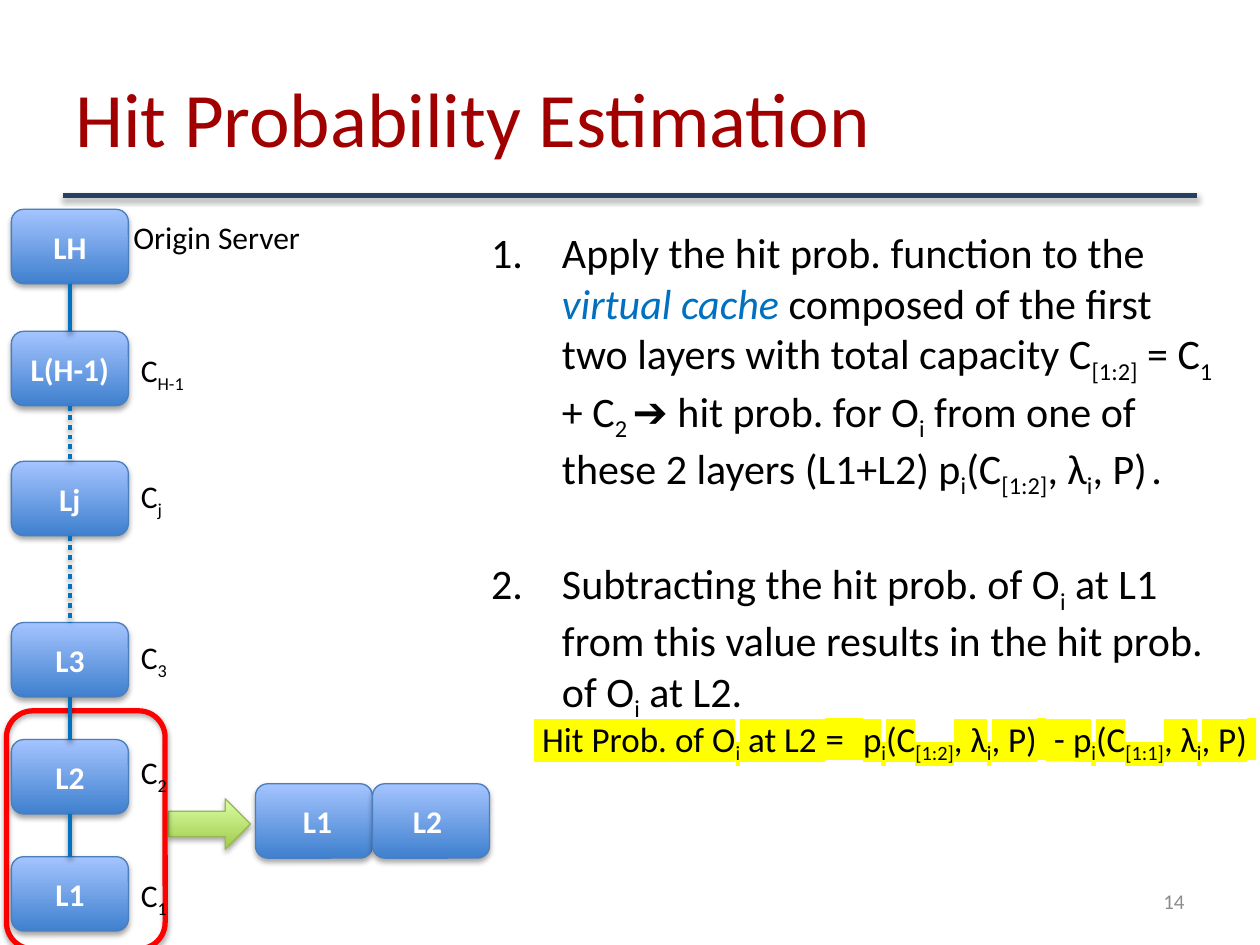
"""Build the hit probability slide: a stack of cache layers beside two numbered steps."""
from pptx import Presentation
from pptx.dml.color import RGBColor
from pptx.enum.dml import MSO_LINE
from pptx.enum.shapes import MSO_CONNECTOR, MSO_SHAPE
from pptx.enum.text import MSO_ANCHOR, PP_ALIGN
from pptx.oxml import parse_xml
from pptx.oxml.ns import nsdecls
from pptx.util import Cm, Pt

ROUND, ARROW = MSO_SHAPE.ROUNDED_RECTANGLE, MSO_SHAPE.RIGHT_ARROW
LINE, DOT = MSO_CONNECTOR.STRAIGHT, MSO_LINE.ROUND_DOT
TOP, MID = MSO_ANCHOR.TOP, MSO_ANCHOR.MIDDLE
LEFT, RIGHT, MIDST = PP_ALIGN.LEFT, PP_ALIGN.RIGHT, PP_ALIGN.CENTER

THEME = {
    "title": {"size": Pt(44), "name": "Calibri", "color": "A00000"},
    "body": {"size": Pt(24), "name": "Calibri", "color": "000000"},
    "term": {"color": "0070C0", "italic": True},
    "sum": {"size": Pt(20), "name": "Calibri", "color": "000000", "mark": "FFFF00"},
    "lato": {"name": "Lato"},
    "thin": {"name": "Lato", "size": Pt(10)},
    "robo": {"name": "Roboto"},
    "tag": {"size": Pt(18), "name": "Calibri", "color": "000000"},
    "node": {"size": Pt(18), "name": "Calibri", "color": "FFFFFF", "bold": True},
    "page": {"size": Pt(12), "name": "Calibri", "color": "8C8C8C"},
    "blue": {"fill": ("3F80CE", "A4C4FF"), "line": ("4B7EBC", 0.75)},
    "green": {"fill": ("A0CA4A", "DAFFA5"), "line": ("98B955", 0.75)},
    "red": {"fill": None, "line": ("FF0000", 3)},
    "rule": ("254061", 3),
    "link": ("0070C0", 2.75),
}

# Text between bars is subscript; a pair names its own style.
TITLE = ["Hit Probability Estimation"]
STEPS = [
    ["Apply the hit prob. function to the ", ("virtual cache ", "term"),
     "composed of the first two layers with total capacity C|[1:2]| = C|1 |+ C|2 |"
     "➔ hit prob. for O|i| from one of these 2 layers (L1+L2) p|i|(C|[1:2]|, λ|i|, P)",
     (" ", "thin"), "."],
    ["Subtracting the hit prob. of O|i| at L1 from this value results in "
     "the hit prob. of O|i| at L2."],
]
SUM = [" Hit Prob. of O|i| at L2 ", ("=  ", "lato"), "p|i|(C|[1:2]|, λ|i|, P)",
       (" ", "lato"), (" - ", "robo"), "p|i|(C|[1:1]|, λ|i|, P)", (" ", "lato"), (" ", "robo")]
# name, top, tag, tag left, tag drop, dotted link to the next layer
STACK = [
    ("LH", 4.22, "Origin Server", 2.44, 0.05, False),
    ("L(H-1)", 6.68, "C|H-1|", 2.59, 0.28, True),
    ("Lj", 9.3, "C|j|", 2.59, 0.2, True),
    ("L3", 12.55, "C|3|", 2.59, 0.18, False),
    ("L2", 14.91, "C|2|", 2.59, 0.15, False),
    ("L1", 17.27, "C|1|", 2.59, 0.26, False),
]
PAIR = [" L1", "L2 "]
WIDE, HIGH, EDGE = 2.36, 1.5, 0.23


def shade(item, alpha, dist):
    """Give a shape or line its soft shadow."""
    item._element.spPr.append(parse_xml(
        f'<a:effectLst {nsdecls("a")}><a:outerShdw blurRad="40000" dist="{dist}" dir="5400000" '
        f'rotWithShape="0"><a:srgbClr val="000000"><a:alpha val="{alpha}000"/></a:srgbClr>'
        '</a:outerShdw></a:effectLst>'))


def style(run, look, sub):
    """Format one run from a dict of values."""
    font, props = run.font, run._r.get_or_add_rPr()
    for key, val in look.items():
        if key == "color":
            font.color.rgb = RGBColor.from_string(val)
        elif key != "mark":
            setattr(font, key, val)
    if "mark" in look:
        font.fill._xPr.solidFill.addnext(parse_xml(
            f'<a:highlight {nsdecls("a")}><a:srgbClr val="{look["mark"]}"/></a:highlight>'
        )) if hasattr(font.fill._xPr, "solidFill") else props[0].addnext(parse_xml(
            f'<a:highlight {nsdecls("a")}><a:srgbClr val="{look["mark"]}"/></a:highlight>'))
    if sub:
        props.set("baseline", "-25000")


def write(para, parts, base):
    """Fill a paragraph with plain, styled and subscript runs."""
    for part in parts:
        text, extra = part if isinstance(part, tuple) else (part, None)
        look = {**THEME[base], **THEME.get(extra, {})}
        for num, bit in enumerate(text.split("|")):
            if bit:
                run = para.add_run()
                run.text = bit
                style(run, look, num % 2)


def put(item, paras, base, anchor=TOP, align=LEFT, wrap=True):
    """Set the text of a shape or box."""
    frame = item.text_frame
    frame.word_wrap, frame.vertical_anchor = wrap, anchor
    for num, parts in enumerate(paras):
        para = frame.add_paragraph() if num else frame.paragraphs[0]
        para.alignment = align
        write(para, parts, base)
    return frame


def box(slide, area, *args, **opts):
    """Add a text box."""
    return put(slide.shapes.add_textbox(*map(Cm, area)), *args, **opts)


def block(slide, kind, area, look):
    """Add a preset shape with its fill, line and shadow."""
    item = slide.shapes.add_shape(kind, *map(Cm, area))
    fill, (hue, width) = THEME[look]["fill"], THEME[look]["line"]
    if fill:
        item.fill.gradient()
        item.fill.gradient_angle = 90
        for stop, tint in zip(item.fill.gradient_stops, fill):
            stop.color.rgb = RGBColor.from_string(tint)
    else:
        item.fill.background()
    item.line.color.rgb, item.line.width = RGBColor.from_string(hue), Pt(width)
    shade(item, 35, 23000)
    return item


def node(slide, left, top, name):
    """Add one cache layer."""
    item = block(slide, ROUND, (left, top, WIDE, HIGH), "blue")
    put(item, [[name]], "node", MID, MIDST, False)


def link(slide, ends, look, dotted=False):
    """Add a straight line."""
    item = slide.shapes.add_connector(LINE, *map(Cm, ends))
    hue, width = THEME[look]
    item.line.color.rgb, item.line.width = RGBColor.from_string(hue), Pt(width)
    if dotted:
        item.line.dash_style = DOT
    shade(item, 38, 20000)


def main():
    """Lay out the slide and save it."""
    deck = Presentation()
    deck.slide_width, deck.slide_height = Cm(25.4), Cm(19.05)
    slide = deck.slides.add_slide(deck.slide_layouts[6])

    link(slide, (1.27, 3.94, 24.13, 3.94), "rule")
    box(slide, (1.27, 0.76, 22.86, 3.18), [TITLE], "title", MID)
    steps = box(slide, (9.65, 4.45, 15.16, 12.57), STEPS, "body")
    for para, gap in zip(steps.paragraphs, (0, 33)):
        para.space_before = Pt(gap)
        props = para._p.get_or_add_pPr()
        for key, val in {"marL": Cm(1.43), "indent": -Cm(1.43)}.items():
            props.set(key, str(val))
        props.append(parse_xml(f'<a:buAutoNum {nsdecls("a")} type="arabicPeriod"/>'))
    box(slide, (18.21, 17.65, 5.92, 1.02), [["14"]], "page", MID, RIGHT)
    block(slide, ARROW, (3.4, 16.1, 1.65, 1.02), "green")
    box(slide, (10.52, 14.33, 15.11, 1.12), [SUM], "sum")

    for num, name in enumerate(PAIR):
        node(slide, 5.15 + num * WIDE, 15.8, name)
    block(slide, ROUND, (0.13, 14.33, 3.2, 4.8), "red")
    for name, top, tag, left, drop, _ in STACK:
        node(slide, EDGE, top, name)
        box(slide, (left, top + drop, 4.37, 1.02), [[tag]], "tag")
    mid = EDGE + WIDE / 2
    for upper, lower in zip(STACK, STACK[1:]):
        link(slide, (mid, upper[1] + HIGH, mid, lower[1]), "link", upper[-1])
    deck.save("out.pptx")


if __name__ == "__main__":
    main()
